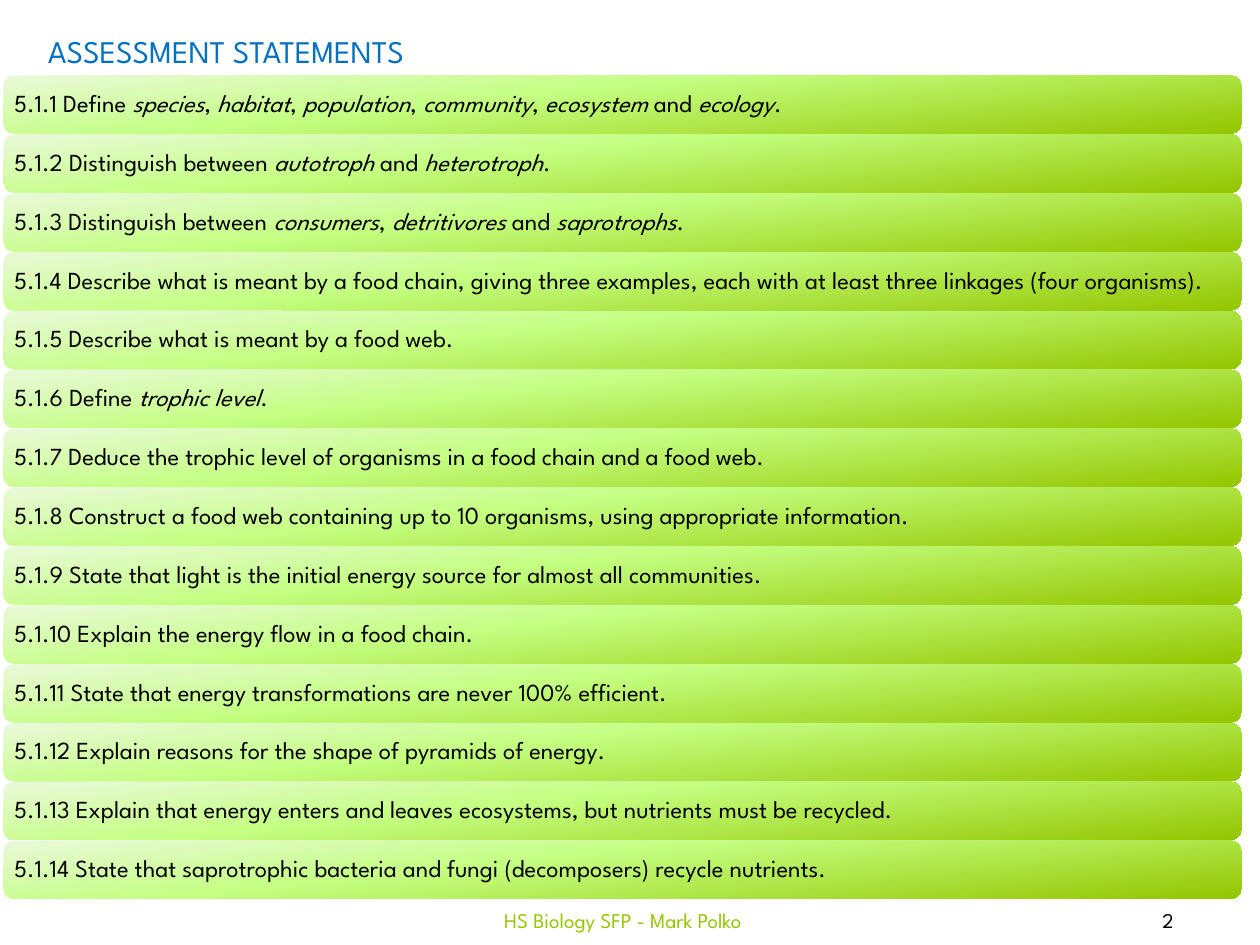
from copy import deepcopy

from pptx import Presentation
from pptx.dml.color import RGBColor
from pptx.enum.shapes import MSO_SHAPE
from pptx.enum.text import MSO_ANCHOR, MSO_AUTO_SIZE, PP_ALIGN
from pptx.util import Inches, Pt

WIDTH, HEIGHT = Inches(10), Inches(7.5)
FONT = "League Spartan"
BAR_SHARE = 0.985  # bar height as a share of its row
GRADIENT = [(0, "EAF9DA"), (0.4, "C4FF82"), (1, "94C600")]
GRADIENT_ANGLE = 276  # counter-clockwise

# Asterisks enclose italic terms
STATEMENTS = [
    "Define *species*, *habitat*, *population*, *community*, *ecosystem *and *ecology*.",
    "Distinguish between *autotroph *and *heterotroph*.",
    "Distinguish between *consumers*, *detritivores *and *saprotrophs*.",
    "Describe what is meant by a food chain, giving three examples, "
    "each with at least three linkages (four organisms).",
    "Describe what is meant by a food web.",
    "Define *trophic level*.",
    "Deduce the trophic level of organisms in a food chain and a food web.",
    "Construct a food web containing up to 10 organisms, using appropriate information.",
    "State that light is the initial energy source for almost all communities.",
    "Explain the energy flow in a food chain.",
    "State that energy transformations are never 100% efficient.",
    "Explain reasons for the shape of pyramids of energy.",
    "Explain that energy enters and leaves ecosystems, but nutrients must be recycled.",
    "State that saprotrophic bacteria and fungi (decomposers) recycle nutrients.",
]


def rgb(hex_value):
    return RGBColor.from_string(hex_value)


def share_box(left, top, width, height):
    """Turn shares of the slide's size into lengths."""
    return tuple(round(share * size) for share, size in
                 zip((left, top, width, height), (WIDTH, HEIGHT) * 2))


def set_all(target, values):
    for name, value in values.items():
        setattr(target, name, value)


def write(frame, text, size, color, align=PP_ALIGN.LEFT, spacing=1.0, **frame_format):
    set_all(frame, {"word_wrap": True, "vertical_anchor": MSO_ANCHOR.MIDDLE, **frame_format})
    paragraph = frame.paragraphs[0]
    set_all(paragraph, {"alignment": align, "line_spacing": spacing})
    for index, part in enumerate(text.split("*")):
        run = paragraph.add_run()
        run.text = part
        set_all(run.font, {"name": FONT, "size": Pt(size), "italic": index % 2 == 1})
        run.font.color.rgb = rgb(color)


def fill_gradient(fill):
    fill.gradient()
    fill.gradient_angle = GRADIENT_ANGLE
    # The preset gradient has two stops; add the third
    stop_list = fill._fill._gradFill.gsLst
    stop_list.append(deepcopy(stop_list[-1]))
    for stop, (position, color) in zip(fill.gradient_stops, GRADIENT):
        stop.position = position
        stop.color.rgb = rgb(color)


def add_heading(slide, box):
    heading = slide.shapes.title
    set_all(heading, dict(zip(("left", "top", "width", "height"), box)))
    write(heading.text_frame, "ASSESSMENT STATEMENTS", 18, "0070C0",
          word_wrap=False, vertical_anchor=MSO_ANCHOR.TOP,
          auto_size=MSO_AUTO_SIZE.SHAPE_TO_FIT_TEXT)


def add_statements(slide, box):
    left, top, width, height = box
    row = height / len(STATEMENTS)
    inset = Inches(0.06)
    for index, statement in enumerate(STATEMENTS):
        bar = slide.shapes.add_shape(
            MSO_SHAPE.ROUNDED_RECTANGLE, left, round(top + index * row),
            width, round(row * BAR_SHARE))
        bar.shadow.inherit = False
        bar.line.fill.background()
        fill_gradient(bar.fill)
        write(bar.text_frame, f"5.1.{index + 1} {statement}", 14, "000000", spacing=0.9,
              margin_left=inset, margin_right=inset, margin_top=inset, margin_bottom=inset)


def add_footer(slide, box):
    left, top, width, height = box
    # Start and width as shares of the footer strip
    for text, color, start, span in (("2", "000000", 0.854, 0.146),
                                     ("HS Biology SFP - Mark Polko", "94C600", 0.303, 0.383)):
        label = slide.shapes.add_textbox(
            left + round(width * start), top, round(width * span), height)
        write(label.text_frame, text, 12, color, align=PP_ALIGN.CENTER)


def main():
    deck = Presentation()
    set_all(deck, {"slide_width": WIDTH, "slide_height": HEIGHT})
    slide = deck.slides.add_slide(deck.slide_layouts[5])
    add_footer(slide, share_box(0, 0.947, 1, 0.053))
    add_heading(slide, share_box(0.028, 0.027, 0.321, 0.053))
    add_statements(slide, share_box(0.003, 0.08, 0.982, 0.872))
    deck.save("out.pptx")


if __name__ == "__main__":
    main()
